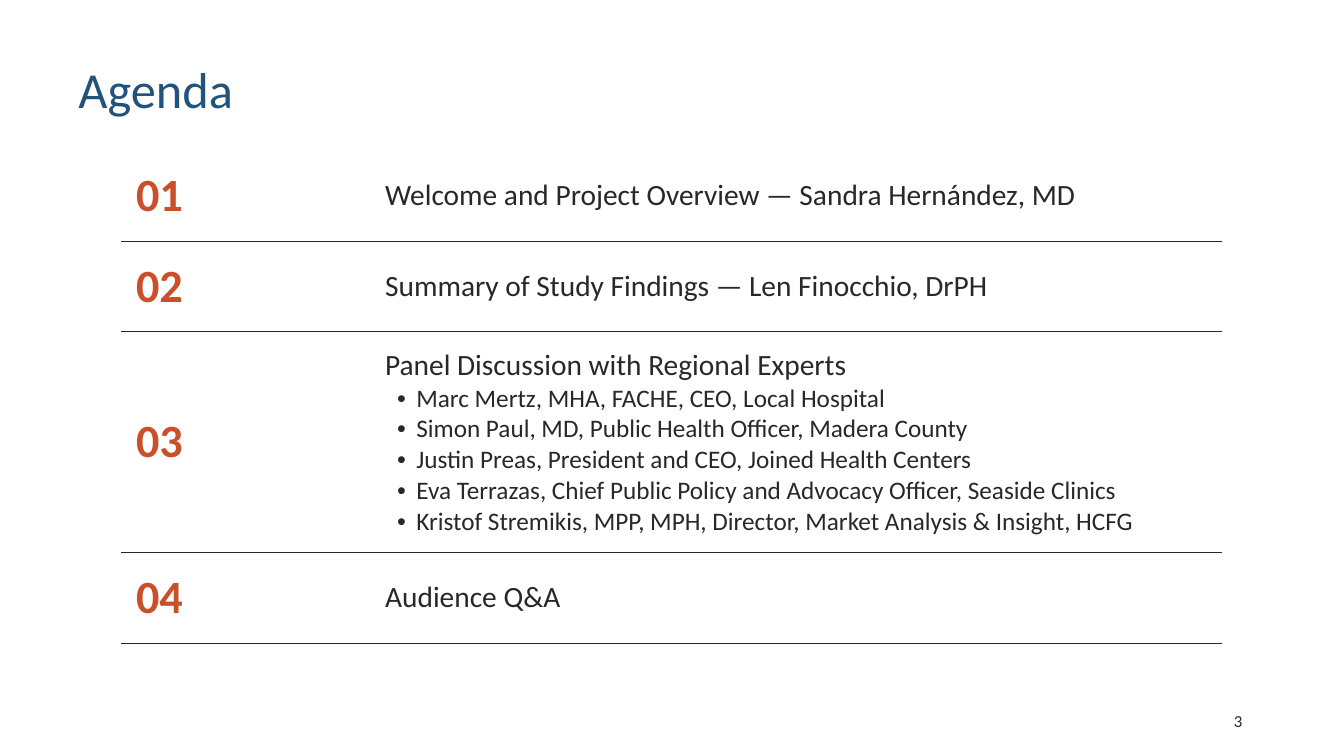
from lxml import etree
from pptx import Presentation
from pptx.dml.color import RGBColor
from pptx.enum.text import MSO_ANCHOR, PP_ALIGN
from pptx.oxml.ns import qn
from pptx.util import Pt

MID = MSO_ANCHOR.MIDDLE
LEFT, RIGHT = PP_ALIGN.LEFT, PP_ALIGN.RIGHT
PX = 9144
PLAIN = "{2D5ABB26-0587-4C30-8999-92F81FD0307C}"
HUES = {"title": "22537C", "num": "C9502B", "ink": "282828"}
ITEMS = [
    ("01", 90, ["Welcome and Project Overview — Sandra Hernández, MD"]),
    ("02", 90, ["Summary of Study Findings — Len Finocchio, DrPH"]),
    ("03", 219, [
        "Panel Discussion with Regional Experts",
        "Marc Mertz, MHA, FACHE, CEO, Local Hospital",
        "Simon Paul, MD, Public Health Officer, Madera County",
        "Justin Preas, President and CEO, Joined Health Centers",
        "Eva Terrazas, Chief Public Policy and Advocacy Officer, Seaside Clinics",
        "Kristof Stremikis, MPP, MPH, Director, Market Analysis & Insight, HCFG",
    ]),
    ("04", 90, ["Audience Q&A"]),
]


class Deck:
    """Holds the slide and its style, and draws each kind of element."""

    def __init__(self, wide, high):
        self.prs = Presentation()
        self.prs.slide_width, self.prs.slide_height = wide * PX, high * PX
        self.slide = self.prs.slides.add_slide(self.prs.slide_layouts[6])

    def style(self, para, size, hue, bold=False):
        for run in para.runs:
            font = run.font
            font.name, font.size, font.bold = "Calibri", Pt(size), bold
            font.color.rgb = RGBColor.from_string(HUES[hue])

    def text(self, box, words, size, hue, align=LEFT, lead=1.0):
        frame = self.slide.shapes.add_textbox(*(n * PX for n in box)).text_frame
        frame.word_wrap, frame.vertical_anchor = True, MID
        frame.text = words
        para = frame.paragraphs[0]
        para.alignment, para.line_spacing = align, lead
        self.style(para, size, hue)

    def bullet(self, para):
        props = para._p.get_or_add_pPr()
        props.set("marL", str(31 * PX))
        props.set("indent", str(-19 * PX))
        etree.SubElement(props, qn("a:buFont")).set("typeface", "Arial")
        etree.SubElement(props, qn("a:buChar")).set("char", "•")

    def rule(self, cell):
        line = etree.Element(qn("a:lnB"), w=str(Pt(0.5)))
        fill = etree.SubElement(line, qn("a:solidFill"))
        etree.SubElement(fill, qn("a:srgbClr")).set("val", HUES["ink"])
        cell._tc.get_or_add_tcPr().insert(0, line)

    def cell(self, cell, lines, size, hue, bold=False):
        cell.margin_left = cell.margin_right = 15 * PX
        cell.margin_top = cell.margin_bottom = 15 * PX
        cell.vertical_anchor = MID
        cell.fill.background()
        self.rule(cell)
        cell.text_frame.text = "\n".join(lines)
        head, *subs = cell.text_frame.paragraphs
        self.style(head, size, hue, bold)
        for para in subs:
            self.bullet(para)
            self.style(para, 18, hue)

    def table(self, left, top, cols, items):
        high = sum(item[1] for item in items)
        box = (left, top, sum(cols), high)
        table = self.slide.shapes.add_table(
            len(items), len(cols), *(n * PX for n in box)).table
        table.first_row = table.horz_banding = False
        table._tbl.tblPr.find(qn("a:tableStyleId")).text = PLAIN
        for col, wide in zip(table.columns, cols):
            col.width = wide * PX
        for row, (num, tall, lines) in zip(table.rows, items):
            row.height = tall * PX
            self.cell(row.cells[0], [num], 33, "num", True)
            self.cell(row.cells[1], lines, 21, "ink")


def main():
    deck = Deck(1333, 750)
    deck.text((68, 58, 1196, 67), "Agenda", 36, "title", lead=0.9)
    deck.table(120, 149, (247, 845), ITEMS)
    deck.text((942, 695, 300, 40), "3", 12, "ink", RIGHT)
    deck.prs.save("out.pptx")


if __name__ == "__main__":
    main()
